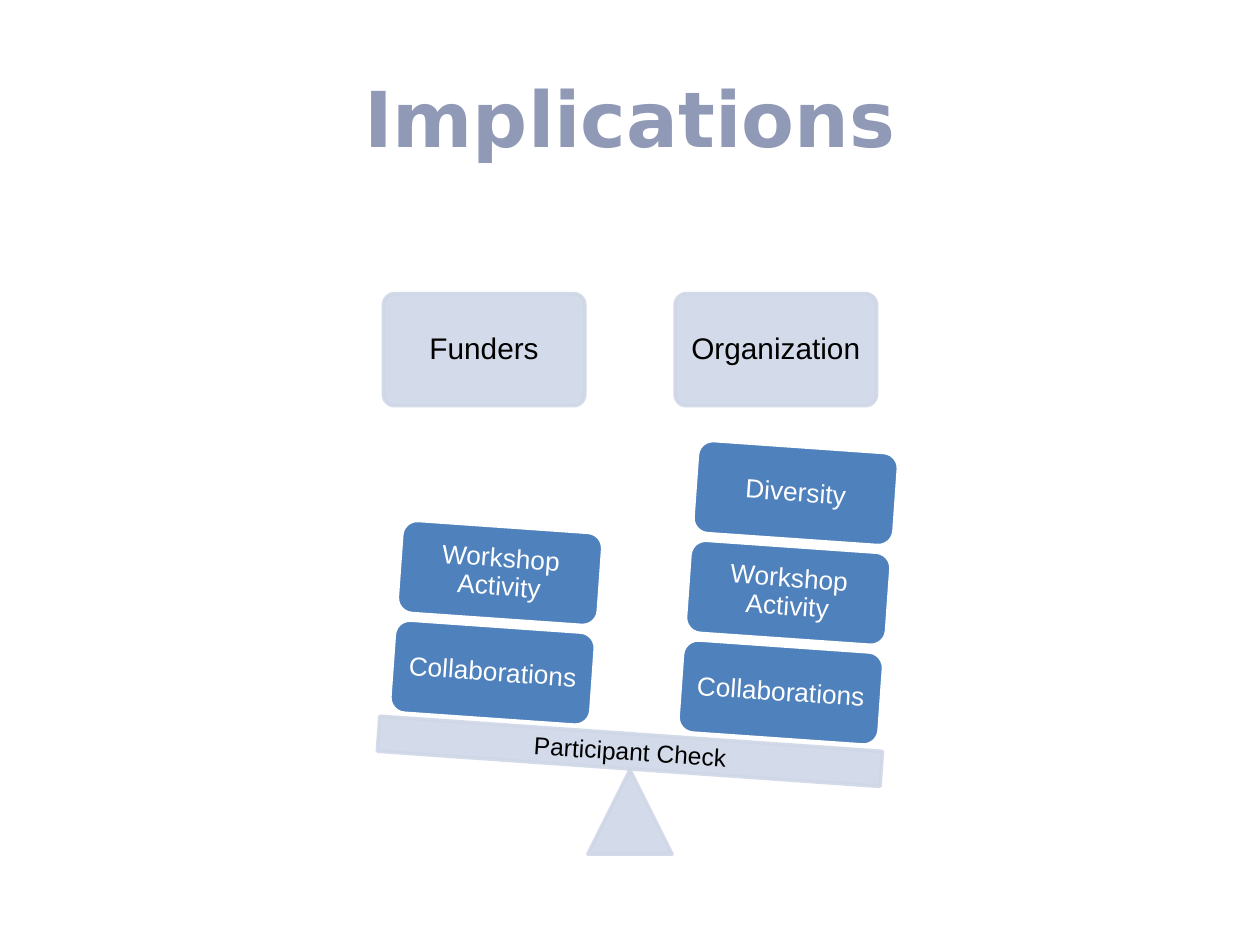
from lxml import etree
from pptx import Presentation, util as u
from pptx.dml.color import RGBColor
from pptx.enum import shapes, text
from pptx.oxml import ns

# Content
TITLE = "Implications"
BEAM_LABEL = "Participant Check"
# Each pan: heading, heading left, (left, top) of lowest brick, bricks from the bottom up
PANS = [
    ("Funders", 7.73, (7.9, 12.62), ["Collaborations", "Workshop Activity"]),
    ("Organization", 13.61, (13.71, 13.02),
     ["Collaborations", "Workshop Activity", "Diversity"]),
]

# Style and measures in cm
PALE, BLUE, WHITE, BLACK, TITLE_COLOR = "CFD7E7", "4F81BD", "FFFFFF", "000000", "909AB7"
TILT = 4
BLOCK_W, HEAD_TOP, HEAD_H, BRICK_H = 4.06, 5.92, 2.26, 1.88
STEP_X, STEP_Y = 0.15, 2.01  # shift from one brick to the next, along the tilt
MSO = shapes.MSO_SHAPE


def rgb(color):
    return RGBColor.from_string(color)


def write(sp, words, size, color, font="Arial", bold=False, spacing=None, inset=0.15):
    tf = sp.text_frame
    tf.word_wrap = True
    tf.vertical_anchor = text.MSO_ANCHOR.MIDDLE
    tf.margin_left = tf.margin_right = u.Cm(inset)
    tf.margin_top = tf.margin_bottom = u.Cm(inset)
    p = tf.paragraphs[0]
    p.alignment = text.PP_ALIGN.CENTER
    if spacing:
        p.line_spacing = spacing
    r = p.add_run()
    r.text = words
    r.font.name, r.font.size, r.font.bold = font, u.Pt(size), bold
    r.font.color.rgb = rgb(color)


def add_label(s, box, words, size, color, **style):
    sp = s.shapes.add_textbox(*map(u.Cm, box))
    write(sp, words, size, color, **style)
    return sp


def add_block(s, kind, box, fill, line, alpha=None, corner=None, tilt=0):
    sp = s.shapes.add_shape(kind, *map(u.Cm, box))
    sp.shadow.inherit = False
    sp.rotation = tilt
    if corner:
        sp.adjustments[0] = corner
    sp.fill.solid()
    sp.fill.fore_color.rgb = rgb(fill)
    sp.line.color.rgb = rgb(line)
    sp.line.width = u.Pt(2)
    if alpha:
        for clr in sp.element.spPr.iter(ns.qn("a:srgbClr")):
            etree.SubElement(clr, ns.qn("a:alpha"), val=str(alpha * 1000))
    return sp


def main():
    prs = Presentation()
    prs.slide_width, prs.slide_height = u.Cm(25.4), u.Cm(19.05)
    s = prs.slides.add_slide(prs.slide_layouts[6])

    add_label(s, (1.27, 0.76, 22.86, 3.18), TITLE, 44, TITLE_COLOR,
              font="DejaVu Sans", bold=True, inset=0.25)

    # Headings
    for heading, left, _, _ in PANS:
        sp = add_block(s, MSO.ROUNDED_RECTANGLE, (left, HEAD_TOP, BLOCK_W, HEAD_H),
                       PALE, PALE, alpha=90, corner=0.1)
        write(sp, heading, 17, BLACK, spacing=0.9)

    # Pivot and beam
    add_block(s, MSO.ISOSCELES_TRIANGLE, (11.85, 15.52, 1.7, 1.7), PALE, PALE, alpha=90)
    add_block(s, MSO.RECTANGLE, (7.62, 14.79, 10.16, 0.71), PALE, PALE,
              alpha=90, tilt=TILT)

    # Bricks stacked on the beam
    for _, _, (left, top), bricks in PANS:
        for i, words in enumerate(bricks):
            box = (left + i * STEP_X, top - i * STEP_Y, BLOCK_W, BRICK_H)
            sp = add_block(s, MSO.ROUNDED_RECTANGLE, box, BLUE, WHITE,
                           corner=0.167, tilt=TILT)
            write(sp, words, 15, WHITE, spacing=0.9)

    # Beam label
    sp = add_label(s, (9.2, 14.71, 7.01, 0.86), BEAM_LABEL, 14, BLACK)
    sp.rotation = 3.7

    prs.save("out.pptx")


if __name__ == "__main__":
    main()
